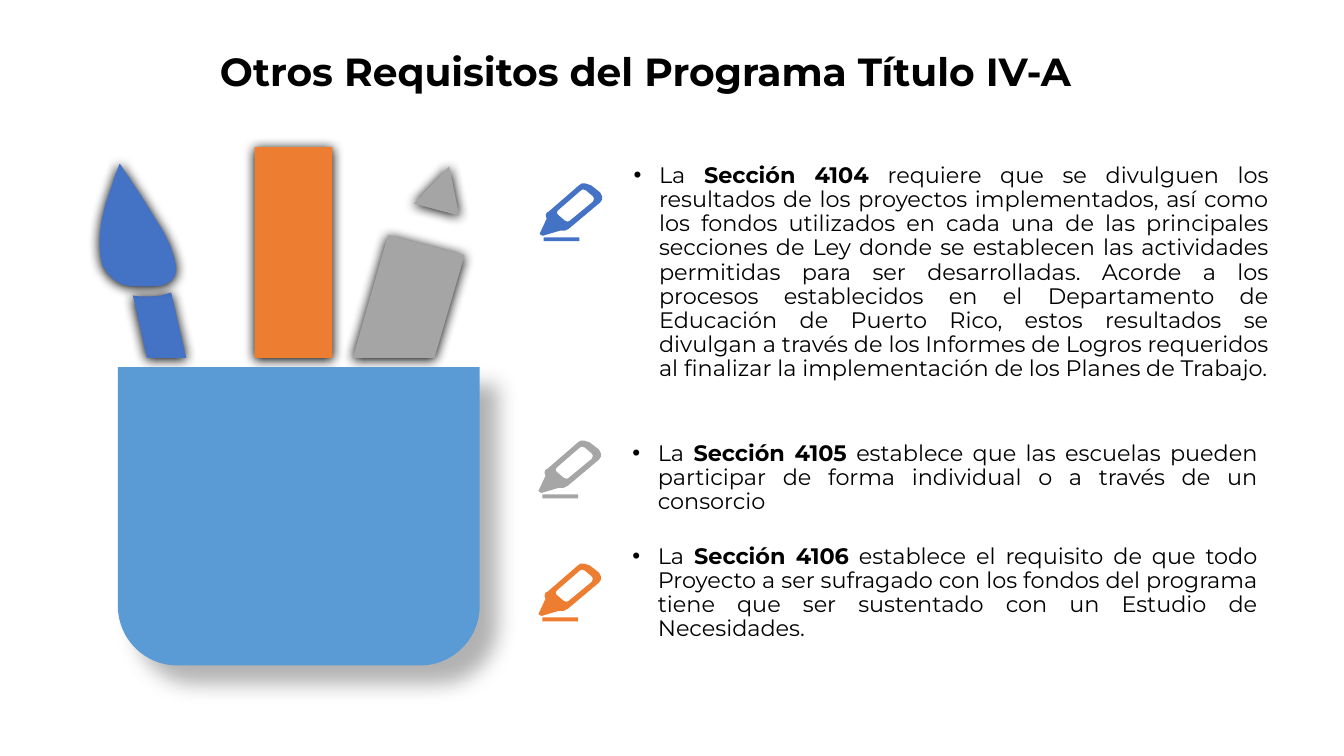
from lxml.etree import SubElement
from pptx import Presentation
from pptx.dml.color import RGBColor
from pptx.enum.shapes import MSO_SHAPE as Preset
from pptx.enum.text import MSO_ANCHOR as Anchor, MSO_AUTO_SIZE as AutoSize, PP_ALIGN as Align
from pptx.oxml.ns import qn
from pptx.util import Cm, Pt

BLACK = RGBColor(0x00, 0x00, 0x00)
BLUE = RGBColor(0x44, 0x72, 0xC4)
ORANGE = RGBColor(0xED, 0x7D, 0x31)
GRAY = RGBColor(0xA5, 0xA5, 0xA5)
MARKER_GRAY = RGBColor(0xA6, 0xA6, 0xA6)
CUP_BLUE = RGBColor(0x5B, 0x9B, 0xD5)
FONT = "Montserrat"
OUTLINE_UNIT = Cm(2.54) / 100

TOOL_SHADOW = dict(opacity=100, blur=8.5, distance=1, angle=90)
CUP_SHADOW = dict(opacity=30, blur=15, distance=18, angle=45)

BRUSH_TIP = [(20, 0), (28, 12), (42, 33), (53, 51), (63, 67), (70, 81), (74, 93),
             (76, 102), (76, 107), (74, 113), (69, 118), (62, 121), (52, 122),
             (42, 122), (33, 122), (22, 120), (14, 115), (8, 109), (3, 102),
             (1, 93), (0, 83), (0, 72), (2, 56), (6, 40), (12, 22), (16, 10)]
BRUSH_HANDLE = [(38, 0), (53, 65), (14, 65), (0, 3), (7, 4), (18, 4), (28, 3)]
PENCIL_TIP = [(35, 0), (45, 49), (0, 37)]
PENCIL_BODY = [(35, 0), (111, 20), (81, 122), (0, 122)]
MARKER_WINDOW = [(43, 6), (41, 7), (18, 27), (17, 29), (18, 31), (25, 37), (28, 38),
                 (30, 37), (53, 18), (54, 15), (53, 13), (46, 7)]
MARKER_EDGE = [(45, 0), (48, 1), (51, 2), (60, 9), (62, 13), (62, 16), (60, 19),
               (29, 45), (25, 47), (20, 47), (3, 52), (1, 51), (0, 50), (7, 35),
               (6, 32), (7, 29), (9, 28), (39, 2), (42, 0)]

NOTES = [
    ((15.57, 4.01, 16.66, 6.4), 4.62, BLUE, "Sección 4104",
     " requiere que se divulguen los resultados de los proyectos implementados, "
     "así como los fondos utilizados en cada una de las principales secciones de Ley "
     "donde se establecen las actividades permitidas para ser desarrolladas. Acorde a "
     "los procesos establecidos en el Departamento de Educación de Puerto Rico, estos "
     "resultados se divulgan a través de los Informes de Logros requeridos al finalizar "
     "la implementación de los Planes de Trabajo."),
    ((15.54, 13.61, 16.41, 3.56), 14.2, ORANGE, "Sección 4106",
     " establece el requisito de que todo Proyecto a ser sufragado con los fondos del "
     "programa tiene que ser sustentado con un Estudio de Necesidades."),
    ((15.54, 11.02, 16.41, 2.11), 11.1, MARKER_GRAY, "Sección 4105",
     " establece que las escuelas pueden participar de forma individual o a través "
     "de un consorcio"),
]


def finish(shape, color, shadow=None):
    """Give a shape a flat fill, no line and an optional outer shadow."""
    shape.fill.solid()
    shape.fill.fore_color.rgb = color
    shape.line.fill.background()
    shape.shadow.inherit = False
    if shadow:
        effects = shape.element.spPr.find(qn("a:effectLst"))
        outer = SubElement(effects, qn("a:outerShdw"), blurRad=str(Pt(shadow["blur"])),
                           dist=str(Pt(shadow["distance"])),
                           dir=str(shadow["angle"] * 60000), algn="tl", rotWithShape="0")
        tint = SubElement(outer, qn("a:srgbClr"), val=str(BLACK))
        SubElement(tint, qn("a:alpha"), val=str(shadow["opacity"] * 1000))


def add_outline(shapes, left, top, contours, color, shadow=None):
    """Draw closed contours as one freeform with its corner at left, top."""
    builder = shapes.build_freeform(*contours[0][0], scale=OUTLINE_UNIT)
    builder.add_line_segments(contours[0][1:], close=True)
    for contour in contours[1:]:
        builder.move_to(*contour[0])
        builder.add_line_segments(contour[1:], close=True)
    finish(builder.convert_to_shape(Cm(left), Cm(top)), color, shadow)


def add_preset(shapes, preset, box, color, shadow=None):
    """Draw a preset shape in a box given in centimetres."""
    shape = shapes.add_shape(preset, *map(Cm, box))
    finish(shape, color, shadow)
    return shape


def add_span(para, text, size, bold=False):
    """Add one formatted stretch of text to a paragraph."""
    span = para.add_run()
    span.text = text
    span.font.name = FONT
    span.font.size = Pt(size)
    span.font.bold = bold
    span.font.color.rgb = BLACK


def add_title(page, box, text):
    """Place and format the title placeholder."""
    title = page.shapes.title
    title.left, title.top, title.width, title.height = map(Cm, box)
    frame = title.text_frame
    frame.auto_size = AutoSize.NONE
    frame.vertical_anchor = Anchor.MIDDLE
    para = frame.paragraphs[0]
    para.alignment = Align.CENTER
    para.line_spacing = 0.9
    add_span(para, text, size=28, bold=True)


def add_cup(page, box):
    """Draw the cup with its pencil, ruler and brush."""
    left, top, width, height = box
    shapes = page.shapes
    add_outline(shapes, left + 7.92, top + 0.48, [PENCIL_TIP], GRAY, TOOL_SHADOW)
    add_outline(shapes, left + 6.38, top + 2.21, [PENCIL_BODY], GRAY, TOOL_SHADOW)
    add_outline(shapes, left + 0.84, top + 3.66, [BRUSH_HANDLE], BLUE, TOOL_SHADOW)
    add_preset(shapes, Preset.RECTANGLE, (left + 3.91, top, 1.96, 5.31), ORANGE, TOOL_SHADOW)
    cup = add_preset(shapes, Preset.ROUND_2_SAME_RECTANGLE,
                     (left + 0.46, top + 5.54, width - 0.46, height - 5.54),
                     CUP_BLUE, CUP_SHADOW)
    cup.adjustments[0] = 0
    cup.adjustments[1] = 0.2
    add_outline(shapes, left, top + 0.41, [BRUSH_TIP], BLUE, TOOL_SHADOW)


def add_note(page, box, marker_top, color, section, text):
    """Group a bulleted note with the marker at its left."""
    shapes = page.shapes.add_group_shape().shapes
    note = shapes.add_textbox(*map(Cm, box))
    frame = note.text_frame
    frame.word_wrap = True
    frame.auto_size = AutoSize.SHAPE_TO_FIT_TEXT
    para = frame.paragraphs[0]
    layout = para._p.get_or_add_pPr()
    layout.set("marL", str(Cm(0.79)))
    layout.set("indent", str(Cm(-0.64)))
    SubElement(SubElement(layout, qn("a:buClr")), qn("a:srgbClr"), val=str(BLACK))
    SubElement(layout, qn("a:buFont"), typeface="Arial")
    SubElement(layout, qn("a:buChar"), char="•")
    para.alignment = Align.JUSTIFY
    para.line_spacing = 0.9
    para.space_after = Pt(5)
    add_span(para, "La ", size=16)
    add_span(para, section, size=16, bold=True)
    add_span(para, text, size=16)
    marker_left = box[0] - 1.97
    add_outline(shapes, marker_left, marker_top, [MARKER_WINDOW, MARKER_EDGE], color)
    add_preset(shapes, Preset.RECTANGLE,
               (marker_left + 0.1, marker_top + 1.36, 0.9, 0.1), color)


def main():
    """Build the slide and save the deck."""
    deck = Presentation()
    deck.slide_width, deck.slide_height = Cm(33.87), Cm(19.05)
    page = deck.slides.add_slide(deck.slide_layouts[5])
    add_title(page, (0.58, 0.46, 31.37, 2.79), "Otros Requisitos del Programa Título IV-A")
    add_cup(page, (2.51, 3.71, 9.58, 13.06))
    for note in NOTES:
        add_note(page, *note)
    deck.save("out.pptx")


if __name__ == "__main__":
    main()
